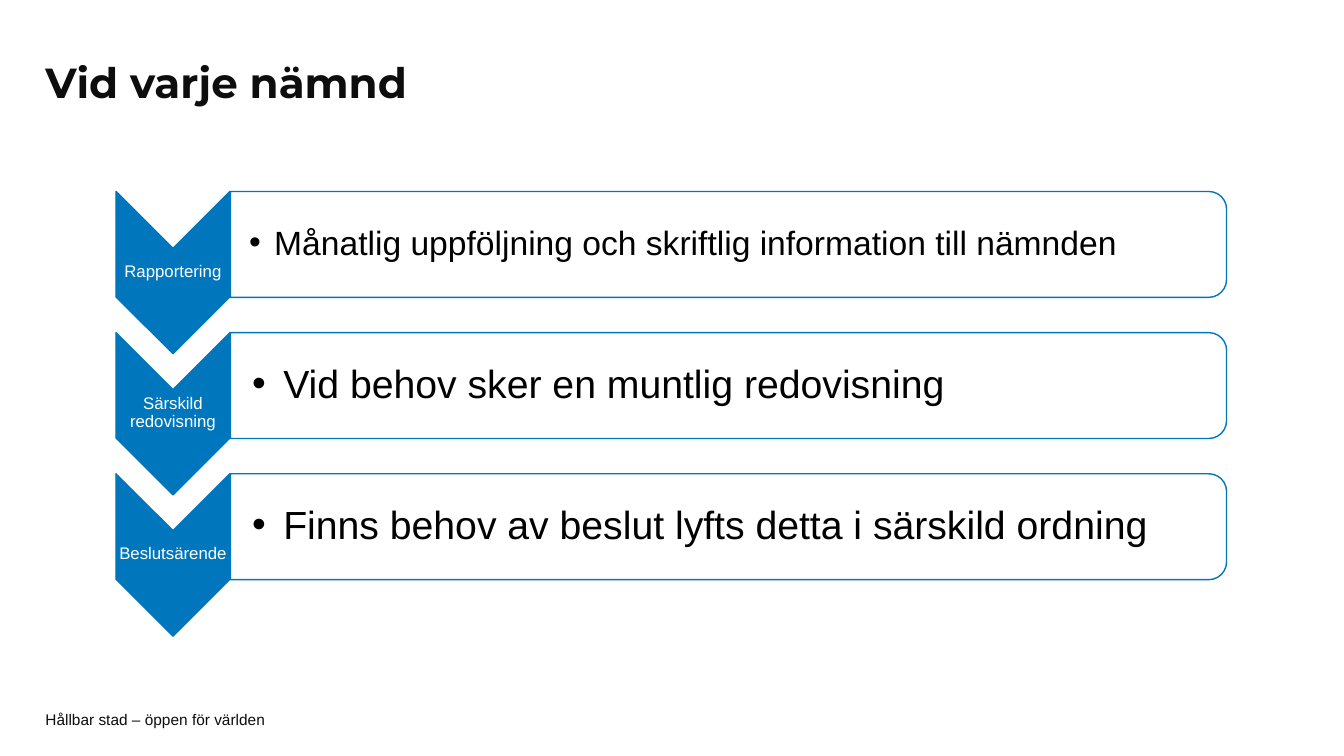
"""Builds the slide "Vid varje nämnd": three chevron steps with descriptions."""
from dataclasses import dataclass

from lxml import etree
from pptx import Presentation
from pptx.dml.color import RGBColor
from pptx.enum.shapes import MSO_SHAPE
from pptx.enum.text import MSO_ANCHOR, PP_ALIGN
from pptx.oxml.ns import qn
from pptx.shapes.autoshape import Shape
from pptx.slide import Slide
from pptx.util import Inches, Pt

CHEVRON = MSO_SHAPE.CHEVRON
ROUNDED_END = MSO_SHAPE.ROUND_2_SAME_RECTANGLE
MIDDLE = MSO_ANCHOR.MIDDLE
LEFT, CENTER = PP_ALIGN.LEFT, PP_ALIGN.CENTER

SLIDE_W, SLIDE_H = Inches(13.33), Inches(7.5)
COLORS = {"blue": "0077BC", "white": "FFFFFF", "black": "000000", "ink": "0D0D0D"}
FIRST_ROW, ROW_PITCH = 25.33, 18.67


@dataclass(frozen=True)
class Area:
    """A rectangle in percent of the slide's width and height."""
    left: float
    top: float
    width: float
    height: float

    def lowered(self, percent: float) -> "Area":
        """Return the same rectangle further down the slide."""
        return Area(self.left, self.top + percent, self.width, self.height)

    def emu(self) -> tuple[int, int, int, int]:
        """Return left, top, width and height as slide lengths."""
        return (round(self.left * SLIDE_W / 100), round(self.top * SLIDE_H / 100),
                round(self.width * SLIDE_W / 100), round(self.height * SLIDE_H / 100))


@dataclass(frozen=True)
class Step:
    """One row: the chevron's label and its description."""
    label: str
    description: str
    size: int
    inset: float
    hanging: float


TITLE = Area(3.38, 5.87, 75.24, 10.8)
FOOTER = Area(3.38, 94.13, 70.89, 2.13)
ARROW = Area(8.63, FIRST_ROW, 8.48, 21.47)
LABEL = Area(8.63, FIRST_ROW + 7.47, 8.48, 6.4)
PANEL = Area(17.14, FIRST_ROW, 74.12, 14)
DESCRIPTION = Area(17.1, FIRST_ROW + 0.67, 73.74, 12.67)

STEPS = [
    Step("Rapportering",
         "Månatlig uppföljning och skriftlig information till nämnden", 24, 0.19, 0.25),
    Step("Särskild redovisning",
         "Vid behov sker en muntlig redovisning", 28, 0.22, 0.31),
    Step("Beslutsärende",
         "Finns behov av beslut lyfts detta i särskild ordning", 28, 0.22, 0.31),
]


def add_text(slide: Slide, area: Area, text: str, *, size: int, color: str,
             font: str = "Arial", bold: bool = False, align: PP_ALIGN = LEFT,
             spacing: float = 0.9, insets: tuple[float, float] = (0, 0),
             right_inset: float = 0, hanging: float = 0) -> None:
    """Add a text box; insets are left and vertical, hanging makes a bullet."""
    frame = slide.shapes.add_textbox(*area.emu()).text_frame
    frame.word_wrap = True
    frame.vertical_anchor = MIDDLE
    frame.margin_left, frame.margin_right = Inches(insets[0]), Inches(right_inset)
    frame.margin_top = frame.margin_bottom = Inches(insets[1])
    paragraph = frame.paragraphs[0]
    if hanging:
        properties = paragraph._p.get_or_add_pPr()
        properties.set("marL", str(Inches(hanging)))
        properties.set("indent", str(-Inches(hanging)))
        etree.SubElement(properties, qn("a:buFont")).set("typeface", "Arial")
        etree.SubElement(properties, qn("a:buChar")).set("char", "•")
    paragraph.alignment = align
    paragraph.line_spacing = spacing
    run = paragraph.add_run()
    run.text = text
    run.font.name, run.font.size, run.font.bold = font, Pt(size), bold
    run.font.color.rgb = RGBColor.from_string(COLORS[color])


def add_turned_shape(slide: Slide, kind: MSO_SHAPE, area: Area, fill: str) -> Shape:
    """Add a blue-outlined shape turned a quarter so that it covers the area."""
    left, top, width, height = area.emu()
    shift = (width - height) // 2
    shape = slide.shapes.add_shape(kind, left + shift, top - shift, height, width)
    shape.rotation = 90
    shape.shadow.inherit = False
    shape.fill.solid()
    shape.fill.fore_color.rgb = RGBColor.from_string(COLORS[fill])
    shape.line.color.rgb = RGBColor.from_string(COLORS["blue"])
    shape.line.width = Pt(1)
    return shape


def add_step(slide: Slide, step: Step, drop: float) -> None:
    """Add one chevron with its label, panel and description."""
    add_turned_shape(slide, CHEVRON, ARROW.lowered(drop), "blue")
    add_text(slide, LABEL.lowered(drop), step.label, size=12, color="white",
             align=CENTER, insets=(0.01, 0.01), right_inset=0.01)
    panel = add_turned_shape(slide, ROUNDED_END, PANEL.lowered(drop), "white")
    panel_color = panel._element.spPr.find(qn("a:solidFill"))[0]
    etree.SubElement(panel_color, qn("a:alpha")).set("val", "90000")
    add_text(slide, DESCRIPTION.lowered(drop), step.description, size=step.size,
             color="black", insets=(step.inset, 0.02), right_inset=0.02,
             hanging=step.hanging)


def main() -> None:
    """Build and save the presentation."""
    presentation = Presentation()
    presentation.slide_width, presentation.slide_height = SLIDE_W, SLIDE_H
    slide = presentation.slides.add_slide(presentation.slide_layouts[6])
    add_text(slide, FOOTER, "Hållbar stad – öppen för världen", size=11,
             color="ink", spacing=1.0)
    add_text(slide, TITLE, "Vid varje nämnd", size=30, color="ink",
             font="Montserrat", bold=True, insets=(0, 0.05))
    for row, step in enumerate(STEPS):
        add_step(slide, step, row * ROW_PITCH)
    presentation.save("out.pptx")


if __name__ == "__main__":
    main()
